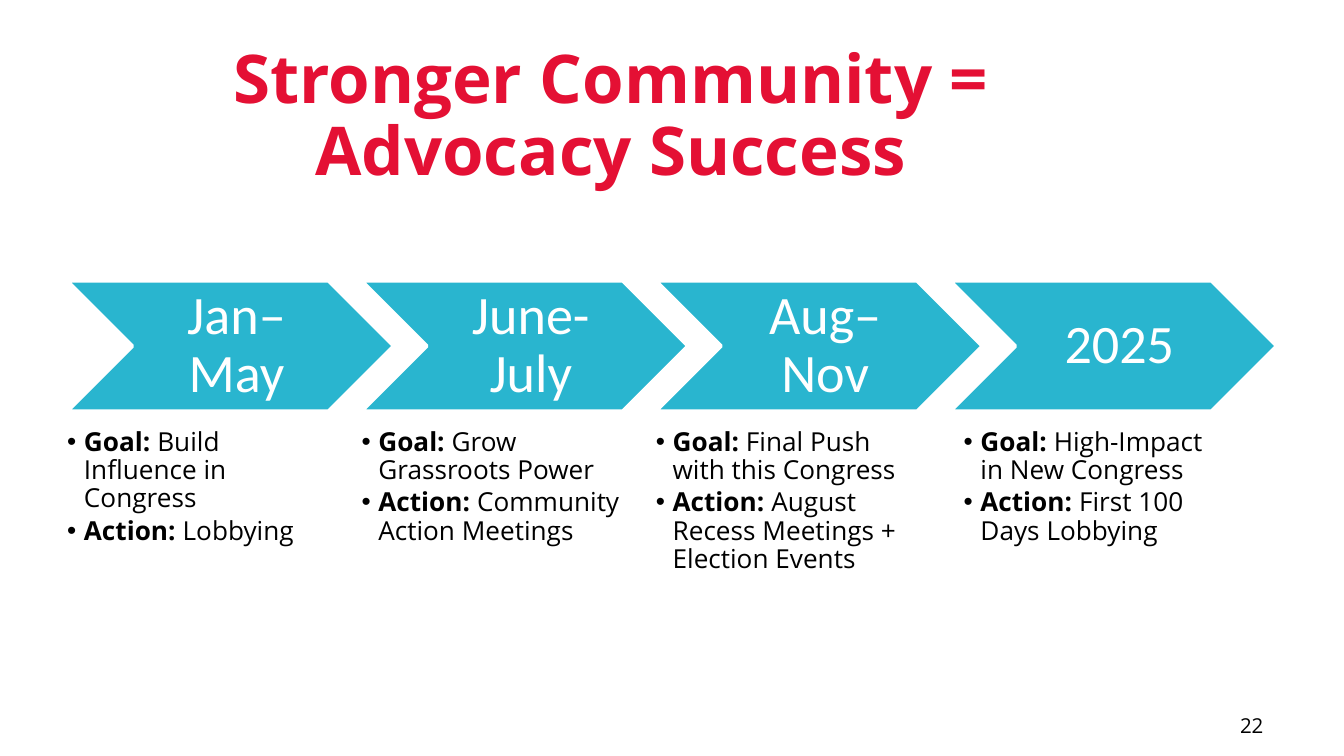
from pptx import Presentation
from pptx.dml.color import RGBColor as RGB
from pptx.enum.shapes import MSO_SHAPE as Shape
from pptx.enum.text import MSO_ANCHOR as Anchor, PP_ALIGN as Align
from pptx.oxml.ns import qn
from pptx.util import Inches, Pt
from lxml.etree import SubElement

TITLE = "Stronger Community = Advocacy Success"
PAGE = "22"
STEPS = [
    ("Jan–May", "Build Influence in Congress", "Lobbying"),
    ("June-July", "Grow Grassroots Power", "Community Action Meetings"),
    ("Aug–Nov", "Final Push with this Congress",
     "August Recess Meetings + Election Events"),
    ("2025", "High-Impact in New Congress", "First 100 Days Lobbying"),
]
THEME = {
    "title": ("Open Sans", 36, "E41034"),
    "step": ("Calibri", 29, "FFFFFF"),
    "body": ("Open Sans", 14, "000000"),
    "page": ("Open Sans", 11, "000000"),
    "bullet": "Arial",
    "fill": "29B5CF",
    "line": "FFFFFF",
}
LEFT, PITCH, TOP = 0.5, 2.19, 2.09
WIDE, HIGH = 2.43, 0.97
INSET = 0.49
LAST_NUDGE = 0.1


def add_box(slide, area, pads=(0.1, 0.05, 0.1, 0.05), anchor=Anchor.MIDDLE):
    frame = slide.shapes.add_textbox(*map(Inches, area)).text_frame
    frame.word_wrap = True
    frame.vertical_anchor = anchor
    (frame.margin_left, frame.margin_top,
     frame.margin_right, frame.margin_bottom) = map(Inches, pads)
    return frame


def add_run(para, text, style, bold=False):
    run = para.add_run()
    run.text = text
    font = run.font
    font.name, size, color = THEME[style]
    font.size = Pt(size)
    font.bold = bold
    font.color.rgb = RGB.from_string(color)


def add_line(frame, text, style, align, after, bold=False, lead=1.0):
    para = frame.paragraphs[0]
    para.alignment = align
    para.line_spacing = lead
    para.space_after = Pt(after)
    add_run(para, text, style, bold)


def add_bullet(para, label, text):
    para.level = 1
    para.line_spacing = 0.9
    para.space_after = Pt(2.1)
    props = para._p.get_or_add_pPr()
    hang = Inches(1 / 8)
    props.set("marL", str(hang))
    props.set("indent", str(-hang))
    SubElement(props, qn("a:buFont")).set("typeface", THEME["bullet"])
    SubElement(props, qn("a:buChar")).set("char", "•")
    add_run(para, label, "body", True)
    add_run(para, text, "body")


def add_step(slide, left, nudge, name, goal, action):
    arrow = slide.shapes.add_shape(
        Shape.CHEVRON, *map(Inches, (left, TOP, WIDE, HIGH)))
    arrow.shadow.inherit = False
    arrow.fill.solid()
    arrow.fill.fore_color.rgb = RGB.from_string(THEME["fill"])
    arrow.line.color.rgb = RGB.from_string(THEME["line"])
    arrow.line.width = Pt(2)

    area = (left + INSET, TOP, WIDE - 2 * INSET, HIGH)
    frame = add_box(slide, area, (0.13, 0.04, 0.04, 0.04))
    add_line(frame, name, "step", Align.CENTER, 10.15, lead=0.9)

    area = (left + nudge, 3.19, 1.94, 1.25)
    frame = add_box(slide, area, (0, 0, 0, 0), Anchor.TOP)
    add_bullet(frame.paragraphs[0], "Goal: ", goal)
    add_bullet(frame.add_paragraph(), "Action: ", action)


def main():
    deck = Presentation()
    deck.slide_width = Inches(10)
    deck.slide_height = Inches(10 * 9 / 16)
    slide = deck.slides.add_slide(deck.slide_layouts[6])

    head = add_box(slide, (0.5, 0.23, 8.09, 1.29))
    add_line(head, TITLE, "title", Align.CENTER, 6, True, 0.9)
    foot = add_box(slide, (7.17, 5.25, 2.33, 0.3))
    add_line(foot, PAGE, "page", Align.RIGHT, 6)

    for i, step in enumerate(STEPS):
        nudge = LAST_NUDGE if i == len(STEPS) - 1 else 0
        add_step(slide, LEFT + i * PITCH, nudge, *step)

    deck.save("out.pptx")


if __name__ == "__main__":
    main()
